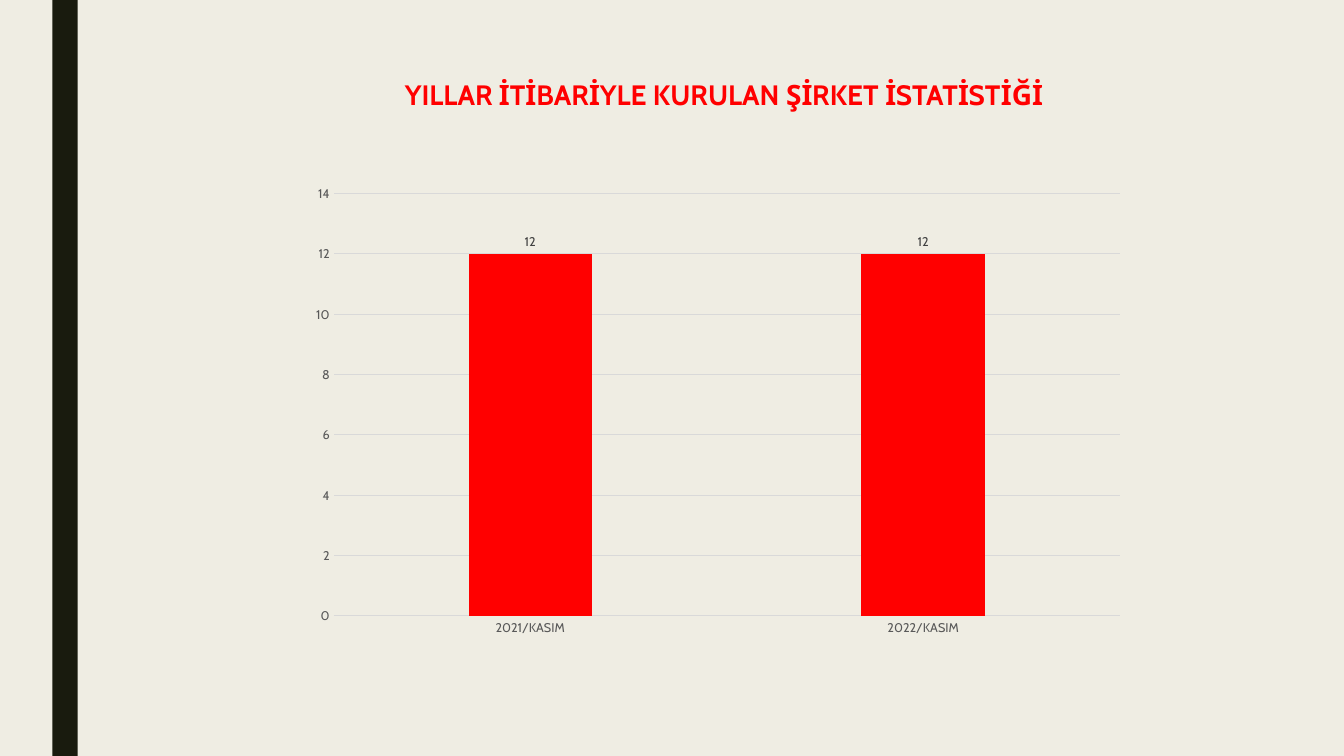
from pptx import Presentation
from pptx.chart.data import CategoryChartData
from pptx.dml.color import RGBColor
from pptx.enum.chart import (XL_CHART_TYPE as ChartType, XL_LABEL_POSITION as LabelPosition,
                             XL_TICK_MARK as TickMark)
from pptx.enum.shapes import MSO_SHAPE as Shape
from pptx.enum.text import MSO_ANCHOR as Anchor, MSO_AUTO_SIZE as AutoSize, PP_ALIGN as Align
from pptx.util import Inches, Pt

COLORS = {"paper": "EFEDE3", "band": "191B0E", "red": "FF0000",
          "axis": "595959", "label": "404040", "grid": "D9D9D9", "text": "000000"}
FONT = "Cabin"
COMPANIES = {"2021/KASIM": 12, "2022/KASIM": 12}


def color(name):
    return RGBColor.from_string(COLORS[name])


def format_font(font, size, color_name, bold=False):
    for key, value in {"name": FONT, "size": Pt(size), "bold": bold}.items():
        setattr(font, key, value)
    font.color.rgb = color(color_name)


def format_line(line):
    line.color.rgb = color("grid")
    line.width = Pt(0.75)


def add_band(page, left, top, width, height):
    band = page.shapes.add_shape(Shape.RECTANGLE, *map(Inches, (left, top, width, height)))
    band.shadow.inherit = False
    band.fill.solid()
    band.fill.fore_color.rgb = color("band")
    band.line.fill.background()


def place_title(page, text, left, top, width, height):
    title = page.shapes.title
    places = {"left": left, "top": top, "width": width, "height": height}
    for key, value in places.items():
        setattr(title, key, Inches(value))
    frame = title.text_frame
    settings = {"text": text, "word_wrap": True, "auto_size": AutoSize.NONE,
                "vertical_anchor": Anchor.MIDDLE}
    for key, value in settings.items():
        setattr(frame, key, value)
    para = frame.paragraphs[0]
    para.alignment = Align.CENTER
    para.line_spacing = 0.89
    format_font(para.runs[0].font, 20, "red", bold=True)


def add_company_chart(page, left, top, width, height):
    data = CategoryChartData()
    data.categories = list(COMPANIES)
    data.add_series("Series 1", list(COMPANIES.values()))
    chart = page.shapes.add_chart(ChartType.COLUMN_CLUSTERED,
                                  *map(Inches, (left, top, width, height)), data).chart
    chart.has_title = False
    chart.has_legend = False
    format_font(chart.font, 10, "text")

    # Axes and gridlines
    for axis in (chart.category_axis, chart.value_axis):
        axis.major_tick_mark = axis.minor_tick_mark = TickMark.NONE
        format_font(axis.tick_labels.font, 9, "axis")
    format_line(chart.category_axis.format.line)
    values = chart.value_axis
    values.minimum_scale = 0
    values.format.line.fill.background()
    format_line(values.major_gridlines.format.line)

    # Columns and their values
    plot = chart.plots[0]
    for key, value in {"gap_width": 219, "overlap": -27, "vary_by_categories": False}.items():
        setattr(plot, key, value)
    series = plot.series[0]
    series.format.fill.solid()
    series.format.fill.fore_color.rgb = color("red")
    labels = series.data_labels
    labels.show_value = True
    labels.position = LabelPosition.OUTSIDE_END
    format_font(labels.font, 9, "label")


def main():
    deck = Presentation()
    deck.slide_width, deck.slide_height = Inches(13.33), Inches(7.5)
    page = deck.slides.add_slide(deck.slide_layouts[5])
    page.background.fill.solid()
    page.background.fill.fore_color.rgb = color("paper")
    add_band(page, 0.52, 0, 0.25, 7.5)
    place_title(page, "YILLAR İTİBARİYLE KURULAN ŞİRKET İSTATİSTİĞİ", 3.56, 0.75, 7.24, 0.41)
    add_company_chart(page, 2.97, 1.75, 8.3, 4.65)
    deck.save("out.pptx")


if __name__ == "__main__":
    main()
